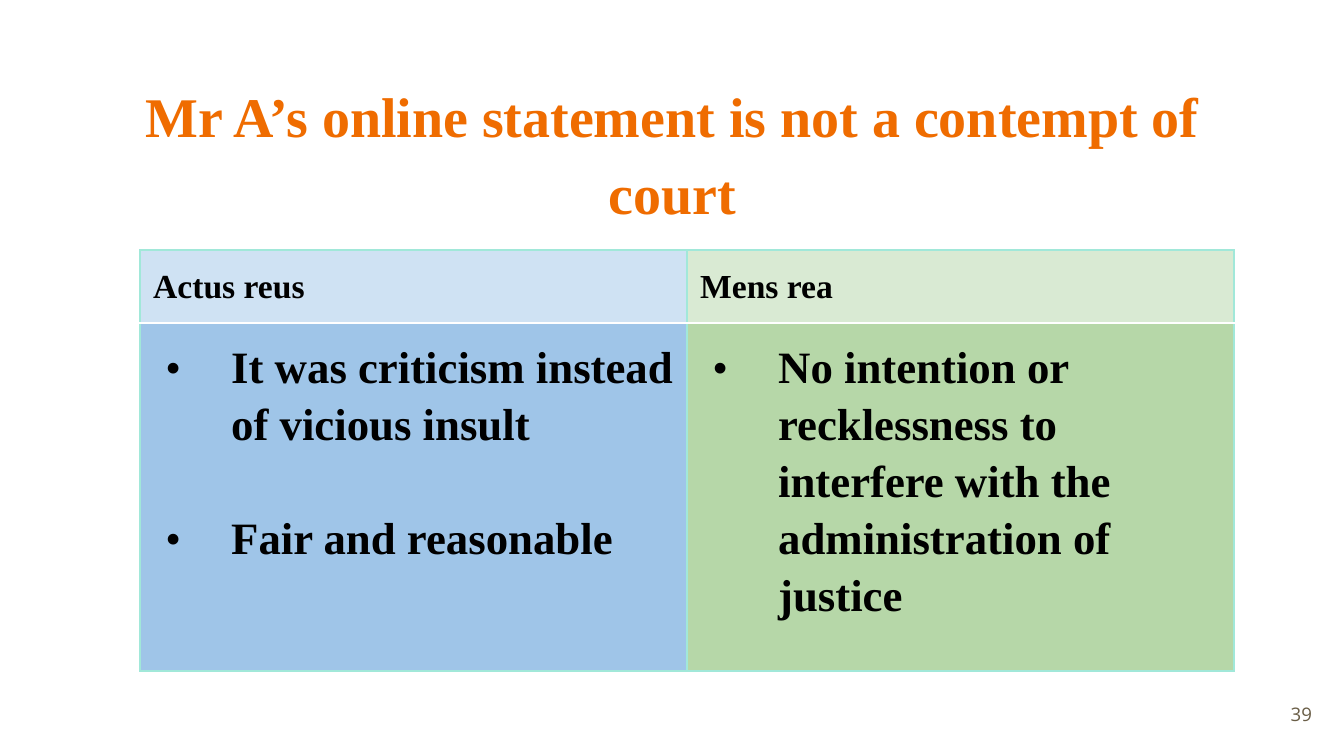
from dataclasses import dataclass

from lxml.etree import SubElement
from pptx import Presentation
from pptx.dml.color import RGBColor
from pptx.enum.text import MSO_ANCHOR as Anchor, PP_ALIGN as Align
from pptx.oxml.ns import qn
from pptx.util import Inches, Pt

ORANGE = RGBColor(0xEF, 0x6C, 0x00)
BROWN = RGBColor(0x69, 0x5D, 0x46)
BLACK = RGBColor(0x00, 0x00, 0x00)
MINT = RGBColor(0xA1, 0xE8, 0xD9)
PALE_BLUE = RGBColor(0xCF, 0xE2, 0xF3)
BLUE = RGBColor(0x9F, 0xC5, 0xE8)
PALE_GREEN = RGBColor(0xD9, 0xEA, 0xD3)
GREEN = RGBColor(0xB6, 0xD7, 0xA8)
SERIF = "Times New Roman"
PAD = Inches(0.1)


@dataclass
class Column:
    head: str
    points: list[str]
    pale: RGBColor
    fill: RGBColor
    align: Align


COLUMNS = [
    Column("Actus reus",
           ["It was criticism instead of vicious insult", "Fair and reasonable"],
           PALE_BLUE, BLUE, Align.LEFT),
    Column("Mens rea",
           ["No intention or recklessness to interfere with the "
            "administration of justice"],
           PALE_GREEN, GREEN, Align.JUSTIFY),
]


def style(para, size: float, color: RGBColor, face: str = SERIF,
          bold: bool = True) -> None:
    for run in para.runs:
        font = run.font
        font.size, font.name, font.bold = Pt(size), face, bold
        font.color.rgb = color


def add_text(slide, text: str, left: float, top: float, width: float,
             height: float, align: Align, anchor: Anchor = Anchor.TOP):
    """Add a one-paragraph text box and return its paragraph."""
    box = slide.shapes.add_textbox(Inches(left), Inches(top),
                                   Inches(width), Inches(height))
    frame = box.text_frame
    frame.word_wrap = True
    frame.vertical_anchor = anchor
    frame.margin_left = frame.margin_right = PAD
    frame.margin_top = frame.margin_bottom = PAD
    frame.text = text
    para = frame.paragraphs[0]
    para.alignment = align
    return para


def add_bullet(para, size: float) -> None:
    """Give a paragraph a black dot and a hanging indent."""
    props = para._p.get_or_add_pPr()
    props.set("marL", str(Inches(0.58)))
    props.set("indent", str(Inches(-0.49)))
    color = SubElement(props, qn("a:buClr"))
    SubElement(color, qn("a:srgbClr"), val=str(BLACK))
    SubElement(props, qn("a:buSzPts"), val=str(round(size * 100)))
    SubElement(props, qn("a:buFont"), typeface=SERIF)
    SubElement(props, qn("a:buChar"), char="•")


def fill_cell(cell, lines: list[str], size: float, fill: RGBColor,
              sides: str) -> None:
    """Set padding, borders on the given sides (of L, R, T, B), fill and text."""
    cell.margin_left = cell.margin_right = PAD
    cell.margin_top = cell.margin_bottom = PAD
    props = cell._tc.get_or_add_tcPr()
    for side in sides:
        line = SubElement(props, qn(f"a:ln{side}"), w=str(Pt(1)))
        paint = SubElement(line, qn("a:solidFill"))
        SubElement(paint, qn("a:srgbClr"), val=str(MINT))
    cell.fill.solid()
    cell.fill.fore_color.rgb = fill
    cell.text_frame.text = "\n".join(lines)
    for para in cell.text_frame.paragraphs:
        para.line_spacing = 1.15
        style(para, size, BLACK)


def add_grid(slide, columns: list[Column]) -> None:
    wide, heights = 4.07, (0.5, 2.59)
    grid = slide.shapes.add_table(
        len(heights), len(columns), Inches(1.04), Inches(1.86),
        Inches(wide * len(columns)), Inches(sum(heights))).table
    grid.first_row = grid.horz_banding = False
    for row, height in zip(grid.rows, heights):
        row.height = Inches(height)
    for index, column in enumerate(columns):
        grid.columns[index].width = Inches(wide)
        head, body = grid.cell(0, index), grid.cell(1, index)
        fill_cell(head, [column.head], 18, column.pale, "LRT")
        head.text_frame.paragraphs[0].alignment = column.align
        fill_cell(body, column.points, 24, column.fill, "LRB")
        for order, para in enumerate(body.text_frame.paragraphs):
            add_bullet(para, 24)
            if order:
                para.space_before = Pt(30.4)


def main() -> None:
    deck = Presentation()
    deck.slide_width = Inches(10)
    deck.slide_height = deck.slide_width * 9 // 16
    slide = deck.slides.add_slide(deck.slide_layouts[6])

    number = add_text(slide, "39", 9.26, 5.1, 0.6, 0.43,
                      Align.RIGHT, Anchor.MIDDLE)
    style(number, 10, BROWN, "Open Sans", False)
    add_grid(slide, COLUMNS)
    title = add_text(slide, "Mr A’s online statement is not a contempt of court",
                     0.7, 0.43, 8.61, 1.23, Align.CENTER)
    title.line_spacing = 1.15
    style(title, 30, ORANGE)

    deck.save("out.pptx")


if __name__ == "__main__":
    main()
